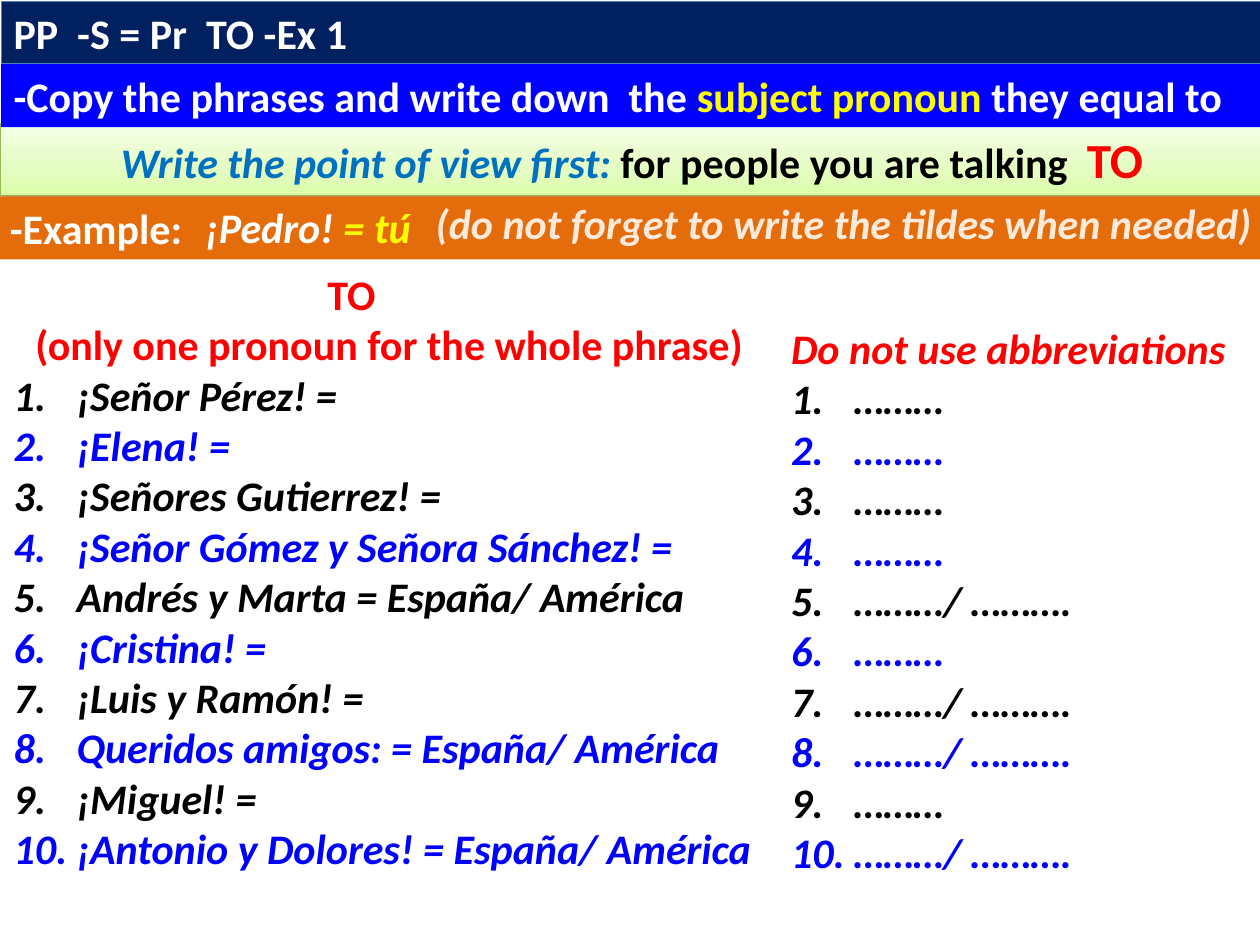
from copy import deepcopy
from dataclasses import dataclass

from lxml import etree
from pptx import Presentation
from pptx.dml.color import RGBColor
from pptx.enum.shapes import MSO_SHAPE
from pptx.enum.text import MSO_ANCHOR, PP_ALIGN
from pptx.oxml.ns import qn
from pptx.util import Inches, Pt

RECTANGLE = MSO_SHAPE.RECTANGLE
LEFT, CENTER = PP_ALIGN.LEFT, PP_ALIGN.CENTER
TOP, BOTTOM = MSO_ANCHOR.TOP, MSO_ANCHOR.BOTTOM
WHITE, BLACK, RED = "FFFFFF", "000000", "FF0000"
BLUE, YELLOW = "0000FF", "FFFF00"


@dataclass
class Span:
    text: str
    color: str
    italic: bool = False
    size: int = 24


@dataclass
class Para:
    spans: list[Span]
    align: PP_ALIGN = LEFT
    indent: float = 0
    numbered: bool = False


@dataclass
class Box:
    left: float
    top: float
    width: float
    height: float
    paras: list[Para]
    fill: str | None = None
    line: str | None = None
    anchor: MSO_ANCHOR = TOP
    top_inset: float = 0.05


def rgb(color: str) -> RGBColor:
    return RGBColor.from_string(color)


def number_paragraph(properties) -> None:
    """Hang the first line and number it 1., 2., 3. ..."""
    properties.set("indent", str(-Inches(0.5)))
    font = etree.SubElement(properties, qn("a:buFont"))
    font.set("typeface", "+mj-lt")
    etree.SubElement(properties, qn("a:buAutoNum")).set("type", "arabicPeriod")


def write_paras(frame, paras: list[Para]) -> None:
    for index, para in enumerate(paras):
        paragraph = frame.paragraphs[0] if index == 0 else frame.add_paragraph()
        paragraph.alignment = para.align
        properties = paragraph._p.get_or_add_pPr()
        if para.indent:
            properties.set("marL", str(Inches(para.indent)))
        if para.numbered:
            number_paragraph(properties)
        for span in para.spans:
            run = paragraph.add_run()
            run.text = span.text
            run.font.name = "Calibri"
            run.font.size = Pt(span.size)
            run.font.bold = True
            run.font.italic = span.italic
            run.font.color.rgb = rgb(span.color)


def draw_box(page, box: Box):
    place = [Inches(v) for v in (box.left, box.top, box.width, box.height)]
    if box.fill:
        shape = page.shapes.add_shape(RECTANGLE, *place)
        shape.shadow.inherit = False
        shape.fill.solid()
        shape.fill.fore_color.rgb = rgb(box.fill)
        if box.line:
            shape.line.color.rgb = rgb(box.line)
            shape.line.width = Pt(0.75)
        else:
            shape.line.fill.background()
    else:
        shape = page.shapes.add_textbox(*place)
    frame = shape.text_frame
    frame.word_wrap = True
    frame.vertical_anchor = box.anchor
    frame.margin_top = Inches(box.top_inset)
    write_paras(frame, box.paras)
    return shape


def add_gradient(shape, colors: list[tuple[float, str]]) -> None:
    """Fill from bottom to top with the given positions and colours."""
    shape.fill.gradient()
    shape.fill.gradient_angle = 90
    stops = shape._element.spPr.find(qn("a:gradFill")).find(qn("a:gsLst"))
    while len(stops) < len(colors):
        stops.append(deepcopy(stops[0]))
    for stop, (position, color) in zip(shape.fill.gradient_stops, colors):
        stop.position = position
        stop.color.rgb = rgb(color)


def add_shadow(shape) -> None:
    effects = shape._element.spPr.find(qn("a:effectLst"))
    shadow = etree.SubElement(effects, qn("a:outerShdw"), blurRad=str(Pt(3.1)),
                              dist=str(Pt(1.6)), dir="5400000", rotWithShape="0")
    color = etree.SubElement(shadow, qn("a:srgbClr"), val=BLACK)
    etree.SubElement(color, qn("a:alpha"), val="38000")


def numbered_list(lines: list[str]) -> list[Para]:
    """Numbered lines in alternating black and blue."""
    return [Para([Span(line, (BLACK, BLUE)[index % 2], True)], indent=0.5, numbered=True)
            for index, line in enumerate(lines)]


PHRASES = [
    "¡Señor Pérez! =", "¡Elena! =", "¡Señores Gutierrez! =",
    "¡Señor Gómez y Señora Sánchez! =", "Andrés y Marta = España/ América",
    "¡Cristina! =", "¡Luis y Ramón! =", "Queridos amigos: = España/ América",
    "¡Miguel! =", "¡Antonio y Dolores! = España/ América",
]
TWO_ANSWERS = {5, 7, 8, 10}
ANSWERS = ["………/ ………." if number in TWO_ANSWERS else "………"
           for number in range(1, len(PHRASES) + 1)]

phrase_box = Box(0.01, 2.08, 6.16, 5.76, [
    Para([Span("TO", RED)], indent=2.49),
    Para([Span("(only one pronoun for the whole phrase)", RED)], CENTER),
    *numbered_list(PHRASES),
])
view_box = Box(0, 0.98, 10.03, 0.57, [Para([
    Span("Write the point of view first: ", "0070C0", True),
    Span("for people you are talking  ", BLACK),
    Span("TO", RED, size=28),
], CENTER)], fill="E4FCC2", line="98B955")
other_boxes = [
    Box(0.01, 0.01, 10, 0.5, [Para([Span("PP  -S = Pr  TO -Ex 1", WHITE)])],
        fill="002060", line="4F81BD"),
    Box(0.01, 0.51, 10, 0.5, [Para([
        Span("-Copy the phrases and write down  the ", WHITE),
        Span("subject pronoun ", YELLOW),
        Span("they equal to", WHITE),
    ])], fill=BLUE),
    Box(6.18, 2.1, 3.84, 5.35, [
        Para([Span("Do not use abbreviations", RED, True)]),
        *numbered_list(ANSWERS),
    ], fill=WHITE, top_inset=0.46),
    Box(-0.02, 1.56, 10.04, 0.5, [Para([Span("-Example:", WHITE)])], fill="E46C0A"),
    Box(1.38, 1.55, 8.38, 0.5, [Para([
        Span("¡Pedro!", WHITE, True), Span(" =", YELLOW, True),
    ], indent=0.15)]),
    Box(3.36, 1.52, 6.72, 0.5, [Para([
        Span("(do not forget to write the tildes when needed)", "FDEADA", True),
    ])]),
    Box(2.76, 1.14, 0.71, 0.91, [Para([Span("tú", YELLOW, True)], CENTER)],
        anchor=BOTTOM),
]


def main() -> None:
    deck = Presentation()
    deck.slide_width, deck.slide_height = Inches(10), Inches(7.5)
    page = deck.slides.add_slide(deck.slide_layouts[6])
    draw_box(page, phrase_box)
    view = draw_box(page, view_box)
    add_gradient(view, [(0, "DAFDA7"), (0.35, "E4FCC2"), (1, "F5FFE7")])
    add_shadow(view)
    for box in other_boxes:
        draw_box(page, box)
    deck.save("out.pptx")


if __name__ == "__main__":
    main()
